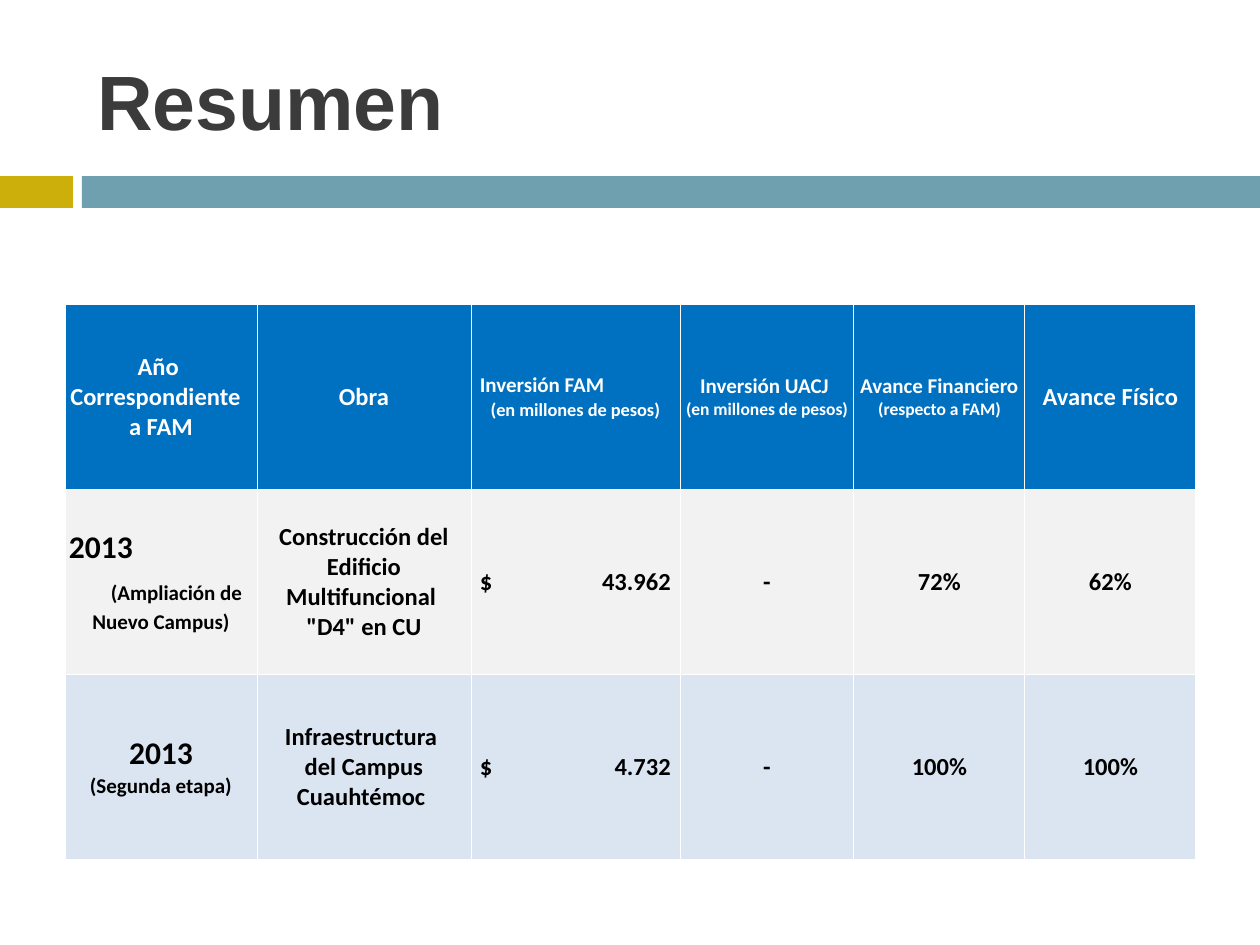
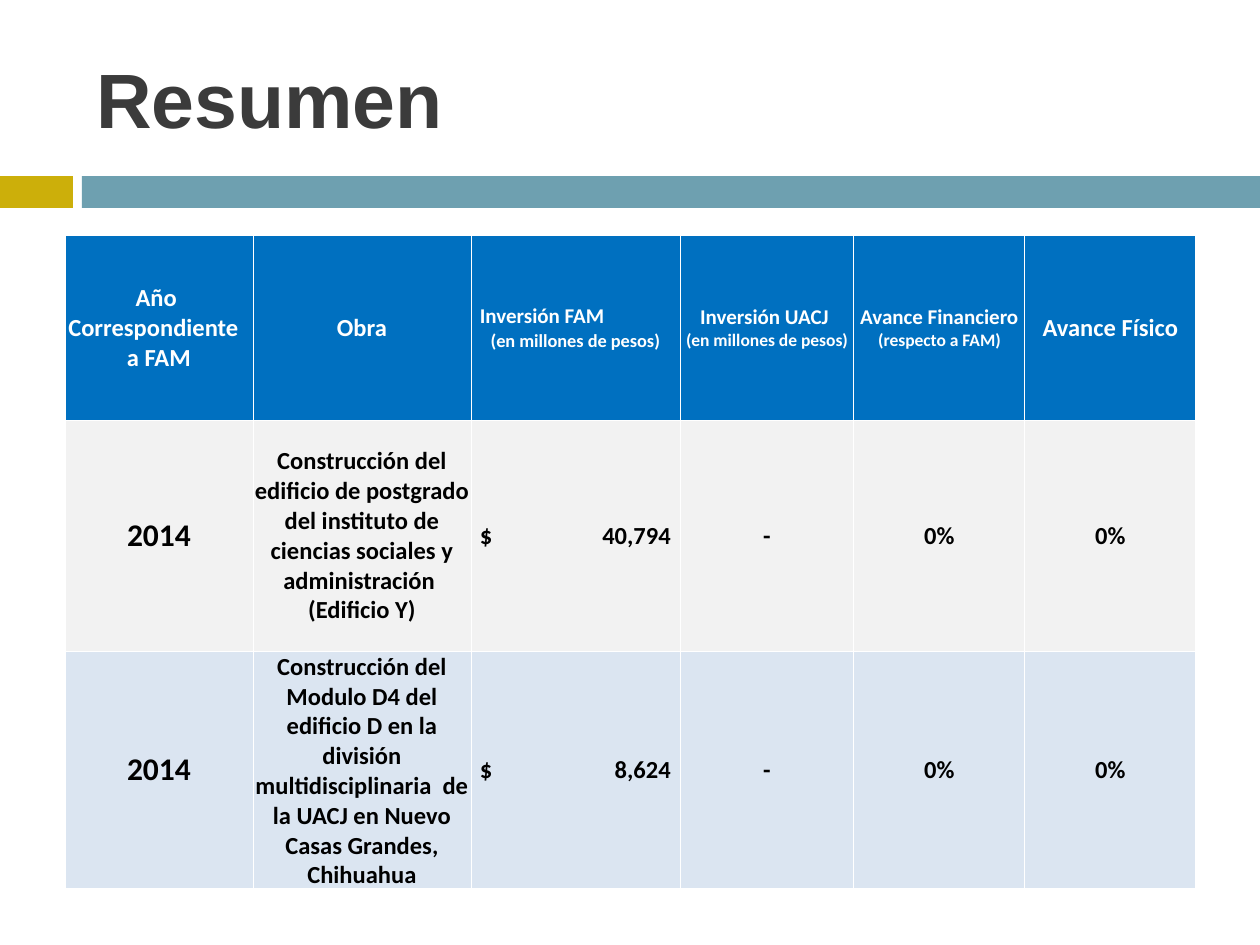
from dataclasses import dataclass

from lxml.etree import SubElement
from pptx import Presentation
from pptx.dml.color import RGBColor
from pptx.enum.shapes import MSO_SHAPE as SHAPE
from pptx.enum.text import MSO_ANCHOR as ANCHOR, PP_ALIGN as ALIGN
from pptx.oxml.ns import qn
from pptx.util import Emu, Pt

WHITE = RGBColor(0xFF, 0xFF, 0xFF)
BLACK = RGBColor(0, 0, 0)
INK = RGBColor(0x3B, 0x3B, 0x3B)
GOLD = RGBColor(0xCC, 0xAF, 0x0A)
TEAL = RGBColor(0x6E, 0xA0, 0xB0)
BLUE = RGBColor(0x00, 0x70, 0xC0)
GRAY = RGBColor(0xF2, 0xF2, 0xF2)
PALE = RGBColor(0xDB, 0xE5, 0xF1)

TITLE_FONT, TABLE_FONT = "Arial", "Calibri"
TABLE_LEFT = 65
LAST_COLS = [209, 174, 171, 171]
CELL_INSET = 1
AMOUNT_INSET, AMOUNT_TAB = 9, 191


def px(n):
    return Emu(round(n * 914400 / 126))


@dataclass
class Line:
    text: str
    size: float = 14
    align: ALIGN = ALIGN.CENTER
    left: int = 0
    right: int = 0
    before: int = 0


HEADER = [
    [Line("Año "), Line("Correspondiente", right=11), Line("a FAM")],
    [Line("Obra")],
    [Line("Inversión FAM", 12, ALIGN.LEFT, left=8), Line("(en millones de pesos)", 10.5)],
    [Line("Inversión UACJ ", 12), Line("(en millones de pesos)", 10)],
    [Line("Avance Financiero", 12), Line("(respecto a FAM)", 10)],
    [Line("Avance Físico")],
]


def add_band(s, left, width, color):
    band = s.shapes.add_shape(SHAPE.RECTANGLE, px(left), px(176), px(width), px(32))
    band.shadow.inherit = False
    band.fill.solid()
    band.fill.fore_color.rgb = color
    band.line.fill.background()


def add_title(s, text, left, top, width, height):
    tf = s.shapes.add_textbox(px(left), px(top), px(width), px(height)).text_frame
    tf.word_wrap = True
    tf.vertical_anchor = ANCHOR.MIDDLE
    tf.text = text
    style_font(tf.paragraphs[0].runs[0].font, TITLE_FONT, 44, INK)


def style_font(font, name, size, color):
    font.name, font.size, font.bold = name, Pt(size), True
    font.color.rgb = color


def set_borders(cell):
    tc_pr = cell._tc.get_or_add_tcPr()
    for side in ("a:lnL", "a:lnR", "a:lnT", "a:lnB"):
        ln = SubElement(tc_pr, qn(side), w=str(Pt(0.5)))
        fill = SubElement(ln, qn("a:solidFill"))
        SubElement(fill, qn("a:srgbClr"), val=str(WHITE))


def add_amount_tab(p):
    tabs = SubElement(p._p.get_or_add_pPr(), qn("a:tabLst"))
    SubElement(tabs, qn("a:tab"), pos=str(px(AMOUNT_TAB)), algn="r")


def fill_cell(cell, lines, fill, color):
    set_borders(cell)
    cell.fill.solid()
    cell.fill.fore_color.rgb = fill
    cell.vertical_anchor = ANCHOR.MIDDLE
    is_amount = "\t" in lines[0].text
    cell.margin_left = px(AMOUNT_INSET if is_amount else CELL_INSET)
    cell.margin_right = cell.margin_top = px(CELL_INSET)
    cell.margin_bottom = 0
    tf = cell.text_frame
    for i, line in enumerate(lines):
        p = tf.add_paragraph() if i else tf.paragraphs[0]
        p.text = line.text
        p.alignment = line.align
        p_pr = p._p.get_or_add_pPr()
        p_pr.set("marL", str(px(line.left)))
        p_pr.set("marR", str(px(line.right)))
        if line.before:
            p.space_before = Pt(line.before)
        if is_amount:
            add_amount_tab(p)
        for r in p.runs:
            style_font(r.font, TABLE_FONT, line.size, color)


def work_row(year, work, amount, financial, physical):
    """Cells of one building work; the peso sign and amount sit at opposite edges."""
    return [year, work, [Line(f"$\t{amount}", align=ALIGN.LEFT)],
            [Line("-")], [Line(financial)], [Line(physical)]]


def add_works_table(s, top, first_cols, heights, works):
    cols = first_cols + LAST_COLS
    rows = [HEADER] + works
    t = s.shapes.add_table(len(rows), len(cols), px(TABLE_LEFT), px(top),
                           px(sum(cols)), px(sum(heights))).table
    t.first_row = t.horz_banding = False
    for col, width in zip(t.columns, cols):
        col.width = px(width)
    for row, height in zip(t.rows, heights):
        row.height = px(height)
    colors = [(BLUE, WHITE), (GRAY, BLACK), (PALE, BLACK)]
    for row, cells, (fill, color) in zip(t.rows, rows, colors):
        for cell, lines in zip(row.cells, cells):
            fill_cell(cell, lines, fill, color)


def add_summary_slide(prs, title_box, top, first_cols, heights, works):
    s = prs.slides.add_slide(prs.slide_layouts[6])
    add_band(s, 0, 73, GOLD)
    add_band(s, 82, 1178, TEAL)
    add_title(s, "Resumen", *title_box)
    add_works_table(s, top, first_cols, heights, works)


def main():
    prs = Presentation()
    prs.slide_width, prs.slide_height = px(1260), px(945)

    # Works of 2013
    add_summary_slide(prs, (85, 32, 1124, 136), 304, [192, 214], [185, 185, 185], [
        work_row([Line("2013", 18, ALIGN.LEFT, left=3),
                  Line("(Ampliación de ", 12, left=36, before=8),
                  Line("Nuevo Campus)", 12, before=2)],
                 [Line("Construcción del Edificio Multifuncional "), Line('"D4" en CU')],
                 "43.962", "72%", "62%"),
        work_row([Line("2013", 18), Line("(Segunda etapa)", 12)],
                 [Line("Infraestructura "), Line("del Campus Cuauhtémoc ")],
                 "4.732", "100%", "100%"),
    ])

    # Works of 2014
    add_summary_slide(prs, (84, 38, 1113, 120), 235, [188, 218], [185, 231, 237], [
        work_row([Line("2014", 18)],
                 [Line("Construcción del edificio de postgrado del instituto de "
                       "ciencias sociales y administración "), Line("(Edificio Y)")],
                 "40,794", "0%", "0%"),
        work_row([Line("2014", 18)],
                 [Line("Construcción del Modulo D4 del edificio D en la división "
                       "multidisciplinaria  de la UACJ en Nuevo Casas Grandes, Chihuahua")],
                 "8,624", "0%", "0%"),
    ])

    prs.save("out.pptx")


if __name__ == "__main__":
    main()
